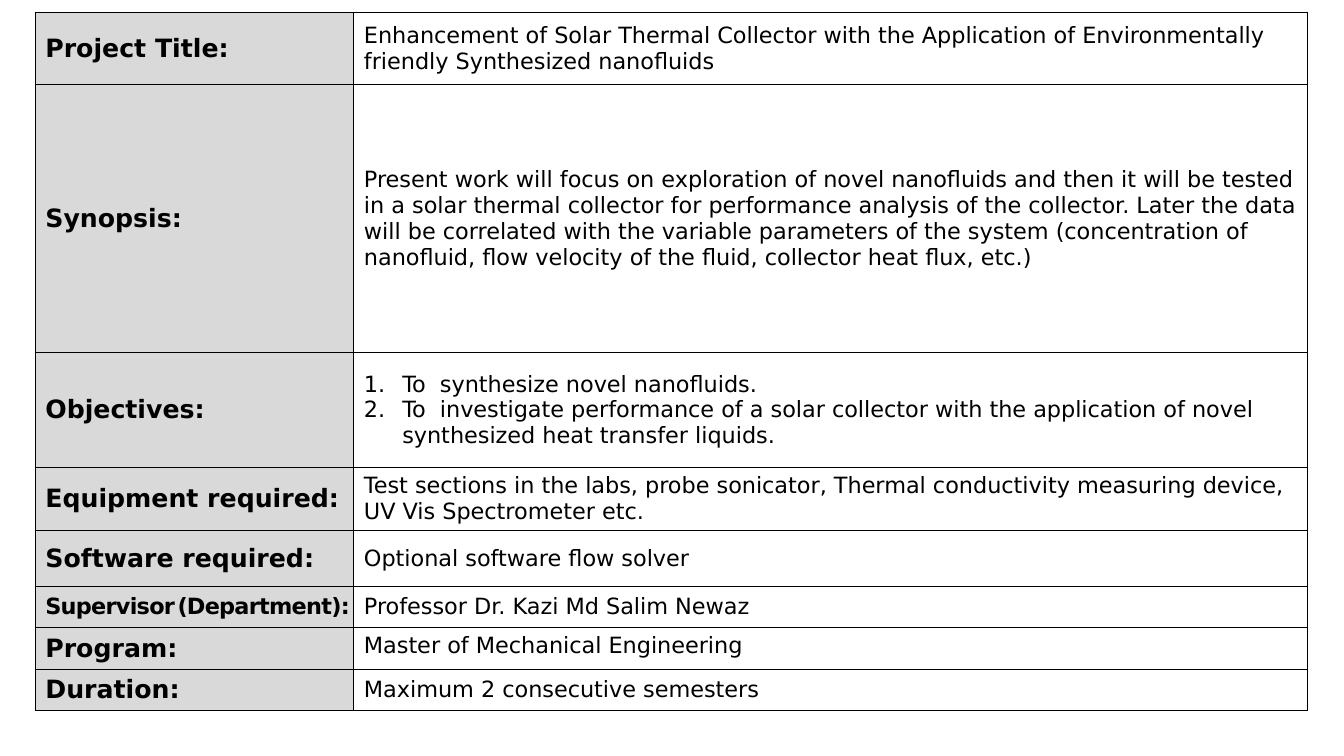
from lxml.etree import SubElement as Sub
from pptx import Presentation
from pptx.dml.color import RGBColor
from pptx.enum.text import MSO_ANCHOR as Anchor
from pptx.oxml.ns import qn
from pptx.util import Inches, Pt

LABEL, BODY = 18, 16

# Each row: height, label runs, body paragraphs
# Each label run: text, size, letter spacing in points
ROWS = [
    (0.72, [("Project Title:", LABEL, 0)],
     ["Enhancement of Solar Thermal Collector with the Application of "
      "Environmentally friendly Synthesized nanofluids"]),
    (2.66, [("Synopsis:", LABEL, 0)],
     ["Present work will focus on exploration of novel nanofluids and then it "
      "will be tested in a solar thermal collector for performance analysis of "
      "the collector. Later the data will be correlated with the variable "
      "parameters of the system (concentration of nanofluid, flow velocity of "
      "the fluid, collector heat flux, etc.)"]),
    (1.14, [("Objectives:", LABEL, 0)],
     ["To  synthesize novel nanofluids.",
      "To  investigate performance of a solar collector with the application "
      "of novel synthesized heat transfer liquids."]),
    (0.62, [("Equipment required:", LABEL, 0)],
     ["Test sections in the labs, probe sonicator, Thermal conductivity "
      "measuring device, UV Vis Spectrometer etc."]),
    (0.56, [("Software required:", LABEL, 0)],
     ["Optional software flow solver"]),
    (0.41, [("Supervisor", BODY, -0.5), (" ", 5, -0.5),
            ("(Department):", BODY, -0.5)],
     ["Professor Dr. Kazi Md Salim Newaz"]),
    (0.41, [("Program:", LABEL, 0)], ["Master of Mechanical Engineering"]),
    (0.41, [("Duration:", LABEL, 0)], ["Maximum 2 consecutive semesters"]),
]


def color(code):
    return RGBColor.from_string(code)


class Sheet:
    font = "DejaVu Sans"
    ink = "000000"
    shade = "D9D9D9"

    def __init__(self, slide):
        self.slide = slide

    def grid(self, left, top, cols, rows):
        frame = self.slide.shapes.add_table(
            len(rows), len(cols), Inches(left), Inches(top),
            Inches(sum(cols)), Inches(sum(rows)))
        table = frame.table
        table.first_row = table.horz_banding = False
        for col, width in zip(table.columns, cols):
            col.width = Inches(width)
        for row, height in zip(table.rows, rows):
            row.height = Inches(height)
        return table

    def cell(self, cell, fill=None):
        cell.vertical_anchor = Anchor.MIDDLE
        self.border(cell)
        if fill:
            cell.fill.solid()
            cell.fill.fore_color.rgb = color(fill)
        else:
            cell.fill.background()

    def border(self, cell):
        props = cell._tc.get_or_add_tcPr()
        for side in ("a:lnL", "a:lnR", "a:lnT", "a:lnB"):
            line = Sub(props, qn(side), w=str(Pt(1)))
            Sub(Sub(line, qn("a:solidFill")), qn("a:srgbClr"), val=self.ink)

    def run(self, para, text, size, bold=False, gap=0):
        run = para.add_run()
        run.text = text
        font = run.font
        font.name, font.size, font.bold = self.font, Pt(size), bold
        font.color.rgb = color(self.ink)
        if gap:
            run._r.get_or_add_rPr().set("spc", str(int(gap * 100)))

    def number(self, para):
        props = para._p.get_or_add_pPr()
        indent = Inches(0.38)
        props.set("marL", str(indent))
        props.set("indent", str(-indent))
        Sub(props, qn("a:buFont"), typeface="+mj-lt")
        Sub(props, qn("a:buAutoNum"), type="arabicPeriod")

    def label(self, cell, runs):
        self.cell(cell, self.shade)
        for text, size, gap in runs:
            self.run(cell.text_frame.paragraphs[0], text, size, True, gap)
            if gap:
                cell.margin_right = 0

    def body(self, cell, lines):
        self.cell(cell)
        frame = cell.text_frame
        for i, text in enumerate(lines):
            para = frame.add_paragraph() if i else frame.paragraphs[0]
            if len(lines) > 1:
                self.number(para)
            self.run(para, text, BODY)


def main():
    deck = Presentation()
    deck.slide_width, deck.slide_height = Inches(13.33), Inches(7.5)
    sheet = Sheet(deck.slides.add_slide(deck.slide_layouts[6]))

    # Project table
    table = sheet.grid(0.35, 0.12, [3.16, 9.46], [row[0] for row in ROWS])
    for i, (_, runs, lines) in enumerate(ROWS):
        sheet.label(table.cell(i, 0), runs)
        sheet.body(table.cell(i, 1), lines)

    # The program name sits at the top of its cell
    table.cell(6, 1).vertical_anchor = Anchor.TOP

    deck.save("out.pptx")


if __name__ == "__main__":
    main()
